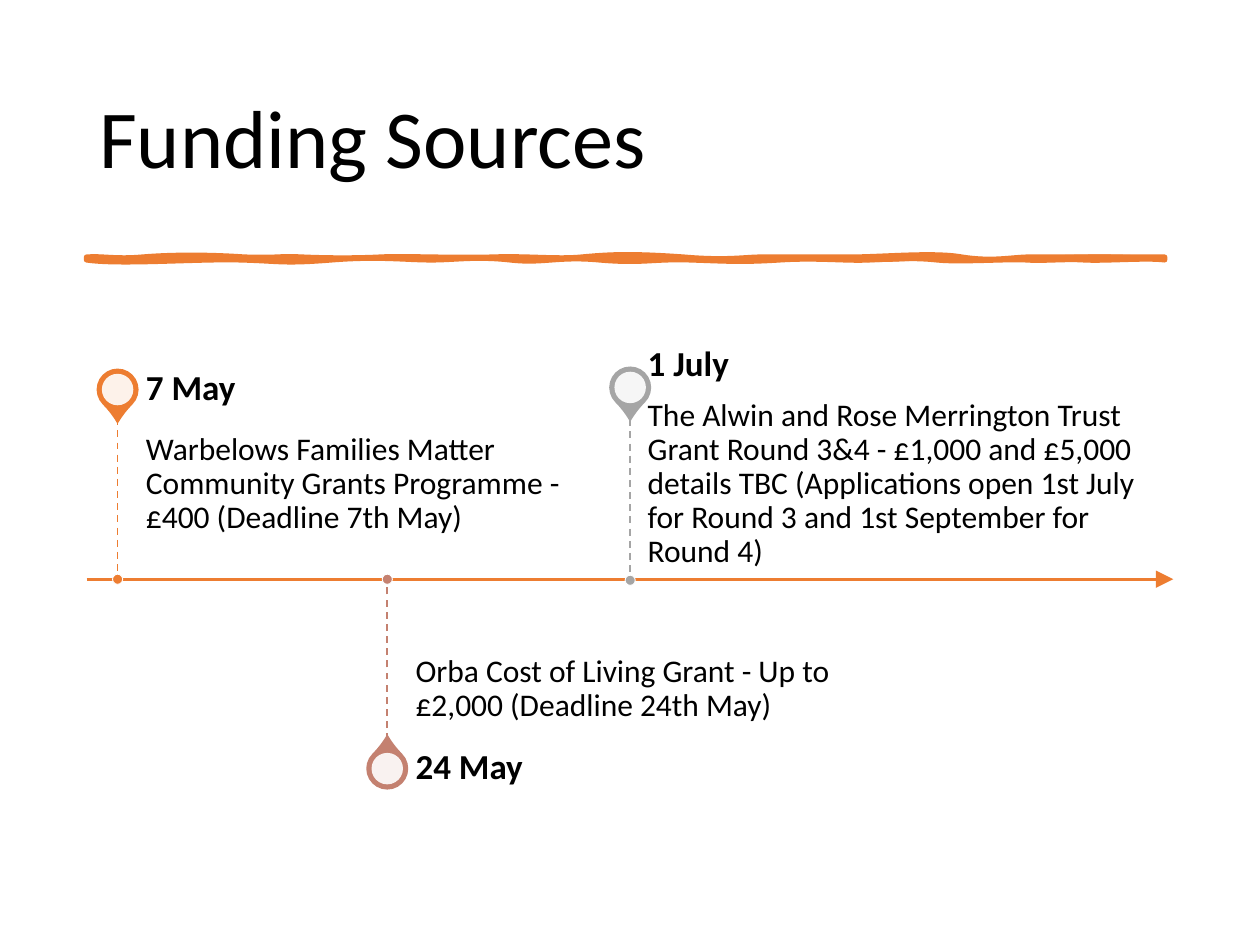
from lxml import etree
from pptx import Presentation
from pptx import util as u
from pptx.dml.color import RGBColor
from pptx.enum import shapes, text
from pptx.oxml.ns import qn

Pt = u.Pt
FONT = "Calibri"
COLOURS = {"ink": "000000", "paper": "FFFFFF", "orange": "ED7D31",
           "rose": "C48170", "grey": "A5A5A5"}
STROKE_WIDTH, STROKE_HEIGHT = 616, 1.4
OUTLINE_TOP = [
    (9, -0.7, 17, 1.4, 32), (49, -1.4, 70, -1.4, 90), (110, 0.7, 109, -0.7, 123),
    (138, 0.7, 155, 0.7, 168), (181, -0.7, 211, 0.7, 232), (253, -0.7, 269, 1.4, 283),
    (298, -1.4, 310, -2.2, 341), (366, 2.2, 376, 0, 386), (395, 0, 418, 0, 437),
    (455, 0, 484, -2.9, 500), (518, 2.9, 529, 0, 539), (549, 0, 582, 0, 616)]
OUTLINE_BOTTOM = [
    (606, -1.4, 582, 0.7, 570), (559, -0.7, 547, 0.7, 537), (528, -0.7, 499, 1.4, 486),
    (473, -1.4, 461, -0.7, 447), (434, 0.7, 418, -1.4, 396), (374, 1.4, 366, 0.7, 345),
    (323, -0.7, 318, 2.2, 293), (269, -2.2, 261, 2.2, 242), (222, -2.2, 211, 0, 197),
    (182, 0, 167, -2.2, 140), (112, 2.2, 112, 0.7, 88), (63, -0.7, 19, 2.9, 0)]
BODY_TOP = [
    (14, 0, 22, 0.7, 45), (68, -0.7, 65, 0, 78), (91, 0, 125, -0.7, 141),
    (158, 0.7, 164, 0, 186), (209, 0, 212, -2.2, 232), (250, 2.2, 276, 2.2, 295),
    (315, -2.2, 323, 0.7, 334), (346, -0.7, 381, -0.7, 398), (415, 0.7, 430, -2.2, 461),
    (493, 2.2, 500, -1.4, 513), (526, 1.4, 572, -4.3, 616)]
BODY_BOTTOM = [
    (599, -1.4, 592, -0.7, 582), (573, 0.7, 546, -1.4, 519), (492, 1.4, 495, -1.4, 480),
    (465, 1.4, 441, 2.2, 428), (416, -2.2, 387, 0, 365), (343, 0, 339, 0.7, 314),
    (289, 0.7, 296, 1.4, 281), (266, -1.4, 257, 1.4, 242), (227, -1.4, 210, -0.7, 179),
    (147, 0.7, 148, 0.7, 127), (106, -0.7, 104, 0.7, 88), (72, 0.7, 44, 2.9, 0)]
EVENTS = [
    {"x": 17.7, "drop": 0, "rise": 108.4, "colour": "orange", "above": True,
     "date": "7 May",
     "detail": "Warbelows Families Matter Community Grants Programme - £400 (Deadline 7th May)",
     "date_box": (16.2, -124.6, 257, 32.4), "detail_box": (16.2, -91.8, 257, 92)},
    {"x": 171.8, "drop": 0, "rise": 108.2, "colour": "rose", "above": False,
     "date": "24 May",
     "detail": "Orba Cost of Living Grant - Up to £2,000 (Deadline 24th May)",
     "date_box": (16.2, 91.6, 257, 32.4), "detail_box": (16.2, -1, 257, 92)},
    {"x": 310.6, "drop": 0.6, "rise": 110.2, "colour": "grey", "above": True,
     "date": "1 July",
     "detail": "The Alwin and Rose Merrington Trust Grant Round 3&4 - £1,000 and £5,000 "
               "details TBC (Applications open 1st July for Round 3 and 1st September "
               "for Round 4)",
     "date_box": (10, -141, 295, 36), "detail_box": (10, -111.8, 295, 102)}]


def colour(name):
    """Look up a palette colour."""
    return RGBColor.from_string(COLOURS[name])


def style_text(frame, words, size, anchor, bold=False):
    """Fill a text frame with one left-aligned paragraph."""
    frame.word_wrap = True
    frame.auto_size = text.MSO_AUTO_SIZE.NONE
    frame.vertical_anchor = anchor
    frame.text = words
    para = frame.paragraphs[0]
    para.alignment = text.PP_ALIGN.LEFT
    para.line_spacing = 0.9
    font = para.runs[0].font
    font.name, font.size, font.bold = FONT, Pt(size), bold
    font.color.rgb = colour("ink")


def add_label(page, box, words, size, anchor, insets, bold=False):
    """Add a text box with its own insets (left, top, right, bottom)."""
    frame = page.shapes.add_textbox(*map(Pt, box)).text_frame
    (frame.margin_left, frame.margin_top,
     frame.margin_right, frame.margin_bottom) = map(Pt, insets)
    style_text(frame, words, size, anchor, bold)


def add_line(page, start, end, name, width):
    """Add a straight line without shadow and return it."""
    line = page.shapes.add_connector(
        shapes.MSO_CONNECTOR.STRAIGHT, *map(Pt, (*start, *end)))
    line.line.color.rgb = colour(name)
    line.line.width = Pt(width)
    etree.SubElement(line._element.spPr, qn("a:effectLst"))
    return line


def add_round(page, kind, centre, size, fill, outline=None, width=1):
    """Add a filled shape centred on a point and return it."""
    x, y = centre
    shape = page.shapes.add_shape(
        kind, Pt(x - size / 2), Pt(y - size / 2), Pt(size), Pt(size))
    shape.shadow.inherit = False
    shape.fill.solid()
    shape.fill.fore_color.rgb = colour(fill)
    if outline:
        shape.line.color.rgb = colour(outline)
        shape.line.width = Pt(width)
    else:
        shape.line.fill.background()
    return shape


def add_title(page, box):
    """Place and format the title."""
    title = page.shapes.title
    title.left, title.top, title.width, title.height = map(Pt, box)
    style_text(title.text_frame, "Funding Sources", 47, text.MSO_ANCHOR.MIDDLE)


def add_curves(paths, flag, top, bottom):
    """Append one closed path of cubic curves, with one paint switched off."""
    route = etree.SubElement(paths, qn("a:path"))
    route.set("w", str(Pt(STROKE_WIDTH)))
    route.set("h", str(Pt(STROKE_HEIGHT)))
    route.set(*flag)

    def step(tag, *points):
        """Append a drawing command with its points."""
        command = etree.SubElement(route, qn(tag))
        for x, y in points:
            point = etree.SubElement(command, qn("a:pt"))
            point.set("x", str(Pt(x)))
            point.set("y", str(Pt(y)))

    step("a:moveTo", (0, 0))
    for base, edge in ((0, top), (STROKE_HEIGHT, bottom)):
        if base:
            step("a:lnTo", (STROKE_WIDTH, base))
        for x1, y1, x2, y2, x3 in edge:
            step("a:cubicBezTo", (x1, base + y1), (x2, base + y2), (x3, base))
    step("a:close")


def add_brush_stroke(page, left, top):
    """Draw the wavy rule under the title."""
    right, bottom = left + STROKE_WIDTH, top + STROKE_HEIGHT
    builder = page.shapes.build_freeform(Pt(left), Pt(top))
    builder.add_line_segments([(Pt(right), Pt(top)), (Pt(right), Pt(bottom)),
                               (Pt(left), Pt(bottom))], close=True)
    stroke = builder.convert_to_shape()
    paths = stroke._element.spPr.find(qn("a:custGeom")).find(qn("a:pathLst"))
    paths.remove(paths[0])
    add_curves(paths, ("fill", "none"), OUTLINE_TOP, OUTLINE_BOTTOM)
    add_curves(paths, ("stroke", "0"), BODY_TOP, BODY_BOTTOM)
    stroke.shadow.inherit = False
    stroke.fill.solid()
    stroke.fill.fore_color.rgb = colour("orange")
    stroke.line.color.rgb = colour("orange")
    stroke.line.width = Pt(3.25)
    etree.SubElement(stroke.line._get_or_add_ln(), qn("a:round"))


def add_event(page, x, y, event):
    """Place one event relative to its point on the axis."""
    name, above = event["colour"], event["above"]
    side = -1 if above else 1
    head = (x, y + side * event["rise"])
    pin = add_round(page, shapes.MSO_SHAPE.TEAR, head, 23, name, name)
    pin.adjustments[0] = 1.15
    pin.rotation = 135 if above else 315
    disc = add_round(page, shapes.MSO_SHAPE.OVAL, head, 18, "paper")
    swatch = disc.fill._xPr.find(qn("a:solidFill"))[0]
    etree.SubElement(swatch, qn("a:alpha")).set("val", "90000")

    def place(box):
        """Move a relative box to the event's point."""
        return (x + box[0], y + box[1], *box[2:])

    anchor = text.MSO_ANCHOR.TOP if above else text.MSO_ANCHOR.BOTTOM
    insets = (0, 8.6, 8.6, 13.7) if above else (0, 13.7, 0, 8.6)
    add_label(page, place(event["detail_box"]), event["detail"], 18, anchor, insets)
    add_label(page, place(event["date_box"]), event["date"], 20,
              text.MSO_ANCHOR.MIDDLE, (0, 0, 10, 0), bold=True)
    stem = add_line(page, (x, y + side * 92), (x, y), name, 1)
    etree.SubElement(stem.line._get_or_add_ln(), qn("a:prstDash")).set("val", "dash")
    add_round(page, shapes.MSO_SHAPE.OVAL, (x, y), 5.8, name, "paper", 0.5)


def add_timeline(page, left, axis, width):
    """Draw the axis arrow and its events."""
    arrow = add_line(page, (left, axis), (left + width, axis), "orange", 1.5)
    tip = etree.SubElement(arrow.line._get_or_add_ln(), qn("a:tailEnd"))
    for key, value in (("type", "triangle"), ("w", "lg"), ("len", "lg")):
        tip.set(key, value)
    for event in EVENTS:
        add_event(page, left + event["x"], axis + event["drop"], event)


def main():
    """Build and save the deck."""
    deck = Presentation()
    deck.slide_width, deck.slide_height = Pt(720), Pt(540)
    page = deck.slides.add_slide(deck.slide_layouts[5])
    add_title(page, (49.5, 28.8, 621, 104.4))
    add_brush_stroke(page, 49.5, 147)
    add_timeline(page, 49.5, 331, 621)
    deck.save("out.pptx")


if __name__ == "__main__":
    main()
